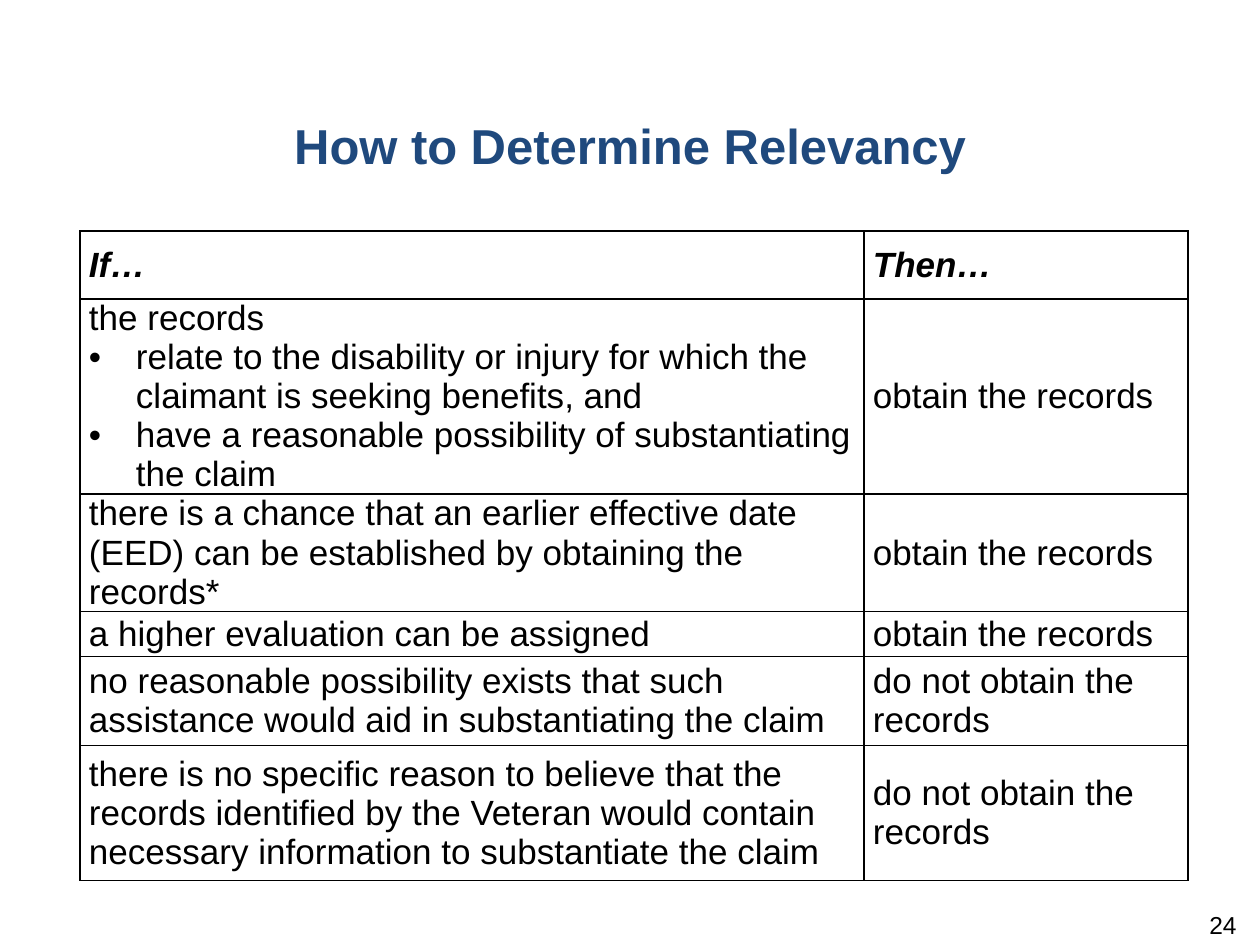
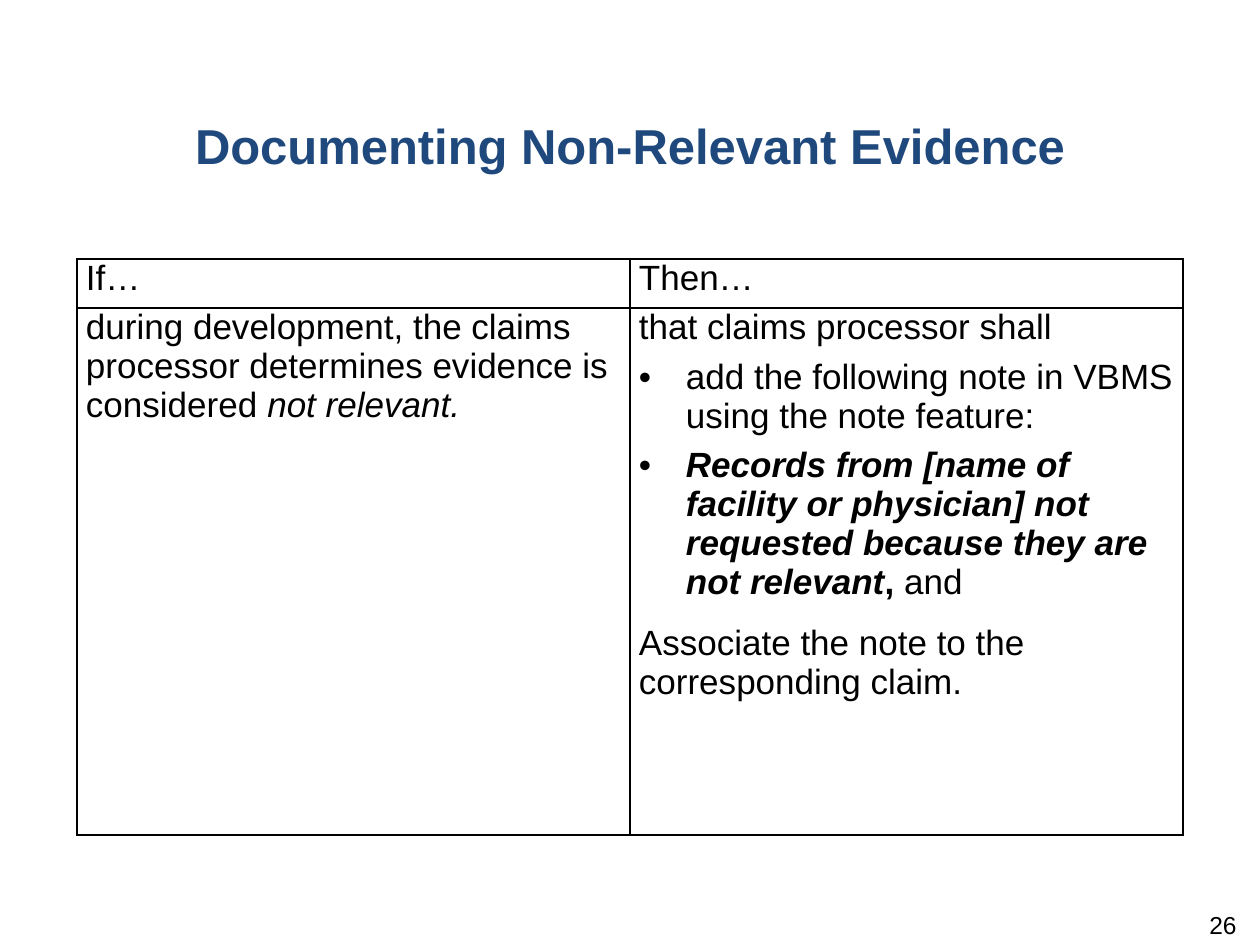
from dataclasses import dataclass

import pptx
import pptx.dml.color
import pptx.enum.text
import pptx.oxml
import pptx.oxml.ns
import pptx.util

PX_PER_INCH = 126
ANCHOR = pptx.enum.text.MSO_ANCHOR
ALIGN = pptx.enum.text.PP_ALIGN
BOLD_ITALIC = {"bold": True, "italic": True}


@dataclass(frozen=True)
class Theme:
    font: str = "Arial"
    title_color: str = "1F497D"
    ink: str = "000000"
    title_size: int = 28
    table_size: int = 20
    table_line: float = 22.3
    number_size: int = 14
    border_pt: int = 1
    bullet_indent: int = 47
    cell_inset: int = 9


THEME = Theme()


def px(n):
    return pptx.util.Emu(round(n * 914400 / PX_PER_INCH))


def set_attrs(obj, values):
    for name, value in values.items():
        setattr(obj, name, value)


def para(*runs, bullet=False, **spacing):
    """Describe a paragraph: runs are strings or (text, font format) pairs; spacing is in points."""
    return {"runs": runs, "bullet": bullet,
            "spacing": {"line_spacing": THEME.table_line, **spacing}}


def add_run(p, text, size, color=THEME.ink, **fmt):
    r = p.add_run()
    r.text = text
    set_attrs(r.font, {"name": THEME.font, "size": pptx.util.Pt(size), "bold": False, **fmt})
    r.font.color.rgb = pptx.dml.color.RGBColor.from_string(color)


def xml_element(tag, attrs, inner=""):
    return pptx.oxml.parse_xml(
        f'<{tag} {pptx.oxml.ns.nsdecls("a")} {attrs}>{inner}</{tag}>')


def add_bullet(p):
    pPr = p._p.get_or_add_pPr()
    pPr.set("marL", str(px(THEME.bullet_indent)))
    pPr.set("indent", str(-px(THEME.bullet_indent)))
    pPr.append(xml_element("a:buFont", f'typeface="{THEME.font}"'))
    pPr.append(xml_element("a:buChar", 'char="•"'))


def add_borders(cell):
    fill = f'<a:solidFill><a:srgbClr val="{THEME.ink}"/></a:solidFill>'
    width = pptx.util.Pt(THEME.border_pt)
    tcPr = cell._tc.get_or_add_tcPr()
    for side in "LRTB":
        tcPr.append(xml_element(f"a:ln{side}", f'w="{width}"', fill))


def fill_cell(cell, paras, anchor):
    add_borders(cell)
    cell.fill.background()
    set_attrs(cell, {"vertical_anchor": anchor, "margin_top": 0, "margin_bottom": 0,
                     "margin_left": px(THEME.cell_inset), "margin_right": px(THEME.cell_inset)})
    tf = cell.text_frame
    for i, item in enumerate(paras):
        p = tf.add_paragraph() if i else tf.paragraphs[0]
        if item["bullet"]:
            add_bullet(p)
        set_attrs(p, {k: pptx.util.Pt(v) for k, v in item["spacing"].items()})
        for run in item["runs"]:
            text, fmt = (run, {}) if isinstance(run, str) else run
            add_run(p, text, THEME.table_size, **fmt)


def add_table(s, left, top, col_widths, row_heights, rows, anchor):
    """Add a plain ruled table; each cell is a string or a list of paragraphs."""
    table = s.shapes.add_table(len(row_heights), len(col_widths), px(left), px(top),
                               px(sum(col_widths)), px(sum(row_heights))).table
    set_attrs(table, {"first_row": False, "horz_banding": False})
    for column, width in zip(table.columns, col_widths):
        column.width = px(width)
    for row, height, contents in zip(table.rows, row_heights, rows):
        row.height = px(height)
        for cell, content in zip(row.cells, contents):
            fill_cell(cell, [para(content)] if isinstance(content, str) else content, anchor)


def add_title(s, text):
    sp = s.shapes.title
    set_attrs(sp, {"left": px(0), "top": px(110), "width": px(1260), "height": px(102)})
    tf = sp.text_frame
    set_attrs(tf, {"vertical_anchor": ANCHOR.TOP, "margin_top": px(6), "word_wrap": True,
                   "auto_size": pptx.enum.text.MSO_AUTO_SIZE.NONE})
    p = tf.paragraphs[0]
    p.alignment = ALIGN.CENTER
    add_run(p, text, THEME.title_size, THEME.title_color, bold=True)


def add_slide_number(s, number):
    tf = s.shapes.add_textbox(px(955), px(910), px(294), px(35)).text_frame
    set_attrs(tf, {"word_wrap": True, "margin_top": 0, "margin_bottom": 0})
    p = tf.paragraphs[0]
    p.alignment = ALIGN.RIGHT
    add_run(p, str(number), THEME.number_size)


def add_slide(prs, title, number):
    s = prs.slides.add_slide(prs.slide_layouts[5])
    add_title(s, title)
    add_slide_number(s, number)
    return s


def add_relevancy_slide(prs):
    s = add_slide(prs, "How to Determine Relevancy", 24)
    obtain, skip = "obtain the records", "do not obtain the records"
    rows = [
        [[para((head, BOLD_ITALIC))] for head in ("If…", "Then…")],
        [[para("the records"),
          para("relate to the disability or injury for which the claimant is seeking "
               "benefits, and", bullet=True),
          para("have a reasonable possibility of substantiating the claim", bullet=True)],
         obtain],
        ["there is a chance that an earlier effective date (EED) can be established by "
         "obtaining the records*", obtain],
        ["a higher evaluation can be assigned", obtain],
        ["no reasonable possibility exists that such assistance would aid in "
         "substantiating the claim", skip],
        ["there is no specific reason to believe that the records identified by the "
         "Veteran would contain necessary information to substantiate the claim", skip],
    ]
    add_table(s, 80, 231, [784, 324], [68, 195, 117, 45, 89, 135], rows, ANCHOR.MIDDLE)


def add_documenting_slide(prs):
    s = add_slide(prs, "Documenting Non-Relevant Evidence", 26)
    rows = [
        ["If…", "Then…"],
        [[para("during development, the claims processor determines evidence is considered ",
               ("not relevant.", {"italic": True}))],
         [para("that claims processor shall", space_after=6),
          para("add the following note in VBMS using the note feature:",
               bullet=True, space_after=6),
          para(("Records from [name of facility or physician] not requested because they "
                "are not relevant", BOLD_ITALIC), (", ", {"bold": True}), "and",
               bullet=True, space_after=6),
          para("Associate the note to the corresponding claim.", space_before=6)]],
    ]
    add_table(s, 77, 259, [553, 553], [49, 527], rows, ANCHOR.TOP)


def main():
    prs = pptx.Presentation()
    set_attrs(prs, {"slide_width": px(1260), "slide_height": px(945)})
    add_relevancy_slide(prs)
    add_documenting_slide(prs)
    prs.save("out.pptx")


if __name__ == "__main__":
    main()
